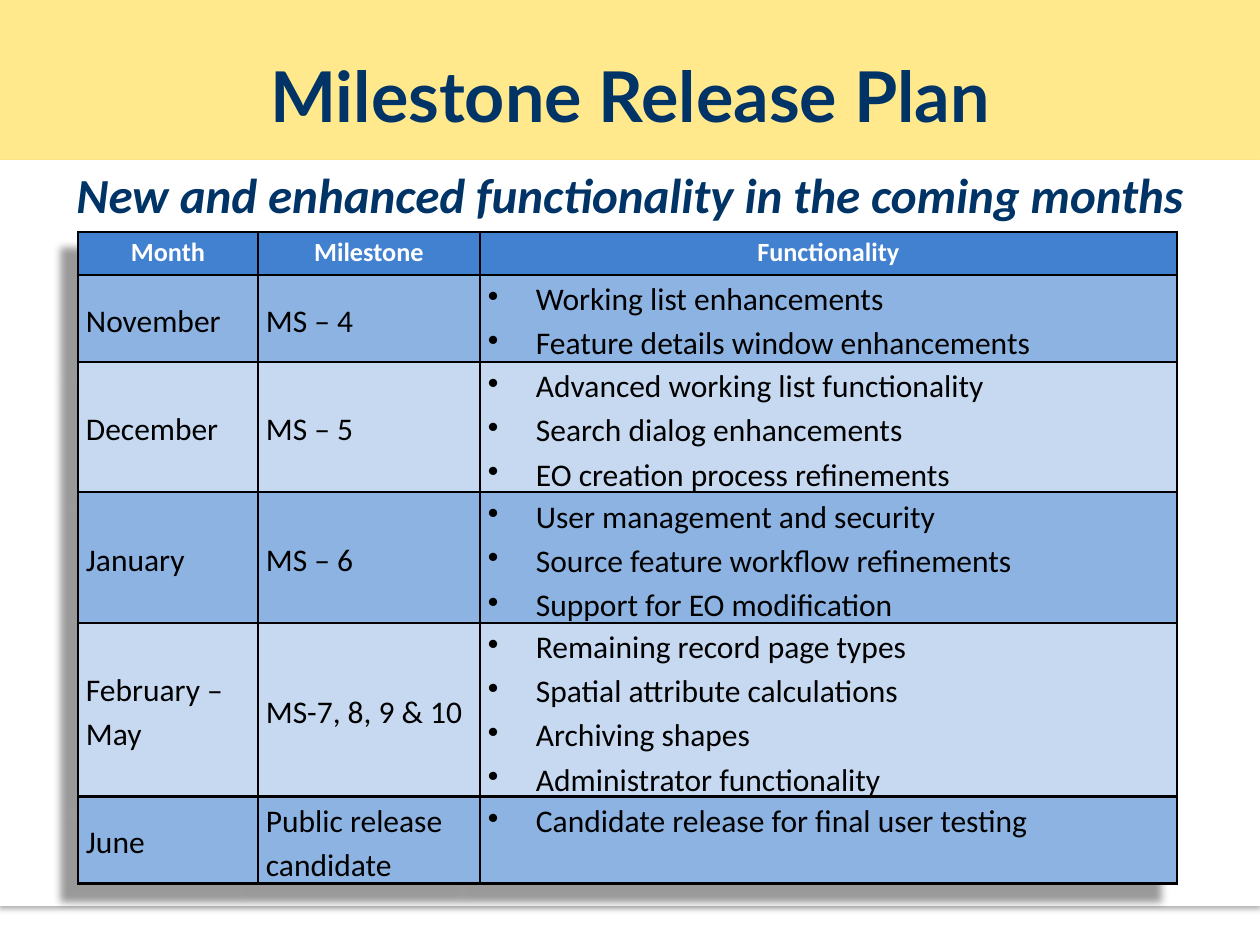
from lxml.etree import SubElement
from pptx import Presentation
from pptx.dml.color import RGBColor
from pptx.enum.shapes import MSO_SHAPE
from pptx.enum.text import MSO_ANCHOR, PP_ALIGN
from pptx.oxml.ns import qn
from pptx.util import Pt

PX = 914400 / 126
COLORS = {
    "band": "FFE98C", "white": "FFFFFF", "navy": "003366", "black": "000000",
    "header": "4181CF", "dark_row": "8DB3E2", "light_row": "C6D9F1",
}
HEADINGS = ["Month", "Milestone", "Functionality"]
RELEASES = [
    ("November", "MS – 4",
     ["Working list enhancements", "Feature details window enhancements"]),
    ("December", "MS – 5",
     ["Advanced working list functionality", "Search dialog enhancements",
      "EO creation process refinements"]),
    ("January", "MS – 6",
     ["User management and security", "Source feature workflow refinements",
      "Support for EO modification"]),
    ("February – May", "MS-7, 8, 9 & 10",
     ["Remaining record page types", "Spatial attribute calculations",
      "Archiving shapes", "Administrator functionality"]),
    ("June", "Public release candidate",
     ["Candidate release for final user testing"]),
]
COLUMN_WIDTHS = [180, 222, 697]
LINE_HEIGHT = 43
BULLET_INDENT = 48


def px(length):
    return round(length * PX)


def color(name):
    return RGBColor.from_string(COLORS[name])


def add_shadow(properties, blur, distance, angle, opacity):
    effects = SubElement(properties, qn("a:effectLst"))
    shadow = SubElement(effects, qn("a:outerShdw"), blurRad=str(Pt(blur)),
                        dist=str(Pt(distance)), dir=str(angle * 60000),
                        algn="ctr", rotWithShape="0")
    shade = SubElement(shadow, qn("a:srgbClr"), val=COLORS["black"])
    SubElement(shade, qn("a:alpha"), val=str(opacity * 1000))


def add_span(para, text, size, ink, font="Calibri", bold=False, italic=False):
    span = para.add_run()
    span.text = text
    span.font.name = font
    span.font.size = Pt(size)
    span.font.bold = bold
    span.font.italic = italic
    span.font.color.rgb = color(ink)


def add_panel(page, left, top, width, height, fill, outline=None):
    panel = page.shapes.add_shape(
        MSO_SHAPE.RECTANGLE, px(left), px(top), px(width), px(height))
    panel.fill.solid()
    panel.fill.fore_color.rgb = color(fill)
    if outline:
        panel.line.color.rgb = color(outline)
        panel.line.width = Pt(0.75)
    else:
        panel.line.fill.background()
    add_shadow(panel.element.spPr, 3.1, 1.8, 90, 35)


def add_heading(page, left, top, width, height, text, anchor, size, **style):
    box = page.shapes.add_textbox(px(left), px(top), px(width), px(height))
    frame = box.text_frame
    frame.word_wrap = True
    frame.vertical_anchor = anchor
    para = frame.paragraphs[0]
    para.alignment = PP_ALIGN.CENTER
    add_span(para, text, size, "navy", bold=True, **style)


def add_borders(cell):
    # Borders must come before the fill in the cell properties
    properties = cell._tc.get_or_add_tcPr()
    for side in ("a:lnL", "a:lnR", "a:lnT", "a:lnB"):
        line = SubElement(properties, qn(side), w=str(Pt(1.5)))
        fill = SubElement(line, qn("a:solidFill"))
        SubElement(fill, qn("a:srgbClr"), val=COLORS["black"])


def fill_cell(cell, lines, fill, size=18, ink="black", align=PP_ALIGN.LEFT,
              anchor=MSO_ANCHOR.TOP, bold=False, bullets=False):
    add_borders(cell)
    cell.fill.solid()
    cell.fill.fore_color.rgb = color(fill)
    cell.margin_left = cell.margin_right = px(8)
    cell.margin_top = cell.margin_bottom = 0
    cell.vertical_anchor = anchor
    frame = cell.text_frame
    for index, text in enumerate(lines):
        para = frame.add_paragraph() if index else frame.paragraphs[0]
        para.alignment = align
        para.line_spacing = 1.15
        if bullets:
            properties = para._p.get_or_add_pPr()
            properties.set("marL", str(px(BULLET_INDENT)))
            properties.set("indent", str(-px(BULLET_INDENT)))
            SubElement(properties, qn("a:buChar"), char="•")
        add_span(para, text, size, ink, bold=bold)


def add_release_table(page, left, top):
    # A row is as high as its longest cell; the last milestone wraps to two lines
    heights = [LINE_HEIGHT] + [LINE_HEIGHT * max(2, len(features))
                               for _, _, features in RELEASES]
    frame = page.shapes.add_table(
        len(heights), len(COLUMN_WIDTHS), px(left), px(top),
        px(sum(COLUMN_WIDTHS)), px(sum(heights)))
    table = frame.table
    add_shadow(table._tbl.tblPr, 4, 13.5, 135, 40)
    # The effect list precedes the style reference
    table._tbl.tblPr.insert(0, table._tbl.tblPr[-1])
    for column, width in zip(table.columns, COLUMN_WIDTHS):
        column.width = px(width)
    for row, height in zip(table.rows, heights):
        row.height = px(height)

    # Header row
    for index, text in enumerate(HEADINGS):
        fill_cell(table.cell(0, index), [text], "header", size=15, ink="white",
                  align=PP_ALIGN.CENTER, bold=True)

    # Alternating release rows
    for row, (month, milestone, features) in enumerate(RELEASES, start=1):
        fill = "dark_row" if row % 2 else "light_row"
        for column, text in enumerate((month, milestone)):
            fill_cell(table.cell(row, column), [text], fill,
                      anchor=MSO_ANCHOR.MIDDLE)
        fill_cell(table.cell(row, 2), features, fill, bullets=True)


def main():
    deck = Presentation()
    deck.slide_width, deck.slide_height = px(1260), px(945)
    page = deck.slides.add_slide(deck.slide_layouts[6])

    # Background panels
    add_panel(page, 0, 0, 1260, 161, "band")
    add_panel(page, 0, 161, 1260, 744, "white", outline="white")

    # Title and subtitle
    add_heading(page, 63, 45, 1134, 100, "Milestone Release Plan",
                MSO_ANCHOR.MIDDLE, 40, font="Lato")
    add_heading(page, 0, 158, 1260, 117,
                "New and enhanced functionality in the coming months",
                MSO_ANCHOR.TOP, 28, italic=True)

    # Release schedule
    add_release_table(page, 78, 232)
    deck.save("out.pptx")


if __name__ == "__main__":
    main()
